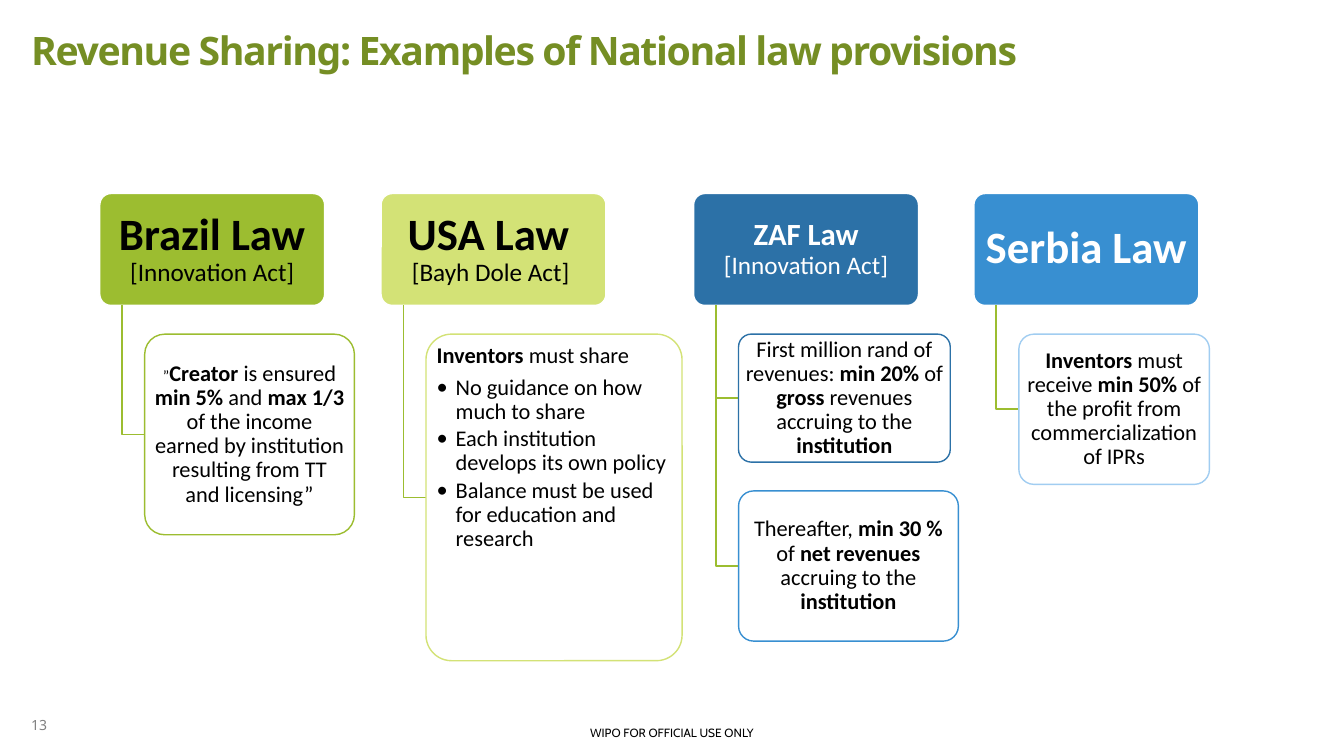
from dataclasses import dataclass, field

from lxml.etree import SubElement
from pptx import Presentation
from pptx.dml.color import RGBColor as Rgb
from pptx.enum.shapes import MSO_SHAPE as Shape
from pptx.enum.text import MSO_ANCHOR as Anchor, MSO_AUTO_SIZE as Fit, PP_ALIGN as Align
from pptx.oxml.ns import qn
from pptx.util import Inches, Pt

HUES = {
    "black": "000000", "white": "FFFFFF", "gray": "808080", "title": "758E24",
    "green": "9CBD30", "lime": "D3E276", "navy": "2C71A7", "blue": "388FD1", "sky": "A1CDF1",
}
CELL = 0.1
TOP, WIDE, HIGH = 19.2, 22.3, 11.1
GAP, TRUNK, SHIFT = 2.85, 2.2, 4.45


@dataclass
class Style:
    size: float
    face: str = "Calibri"
    hue: str = "black"
    align: Align = Align.CENTER
    small: float = 0
    lead: float = 0.9
    anchor: Anchor = Anchor.MIDDLE
    pad: tuple[float, float] = (0.2, 0.2)


@dataclass
class Card:
    cols: float
    rows: float
    edge: str
    text: str = ""


@dataclass
class Law:
    left: float
    hue: str
    head: list[str]
    size: float
    ink: str
    cards: list[Card] = field(default_factory=list)


LAWS = [
    Law(9.9, "green", ["**Brazil Law **[Innovation Act]"], 32, "black", [
        Card(20.8, 19.9, "green", "”**Creator** is ensured **min 5%** and **max 1/3** of the income "
             "earned by institution resulting from TT and licensing”")]),
    Law(37.8, "lime", ["**USA Law **", "[Bayh Dole Act] "], 32, "black", [
        Card(25.4, 32.4, "lime")]),
    Law(68.8, "navy", ["**ZAF Law **[Innovation Act]"], 22, "white", [
        Card(21, 12.7, "navy", "First million rand of revenues: **min 20% **of **gross** revenues "
             "accruing to the **institution**"),
        Card(21.8, 14.9, "blue", "Thereafter, **min 30 % **of **net revenues** accruing to the "
             "**institution**")]),
    Law(96.6, "blue", ["**Serbia Law**"], 32, "white", [
        Card(18.9, 14.9, "sky", "**Inventors** must receive **min 50% **of the profit from "
             "commercialization of IPRs")]),
]
RULES = ["**Inventors** must share", "No guidance on how much to share",
         "Each institution develops its own policy",
         "Balance must be used for education and research"]


def grid(n: float) -> Inches:
    return Inches(n * CELL)


def tint(name: str) -> Rgb:
    return Rgb.from_string(HUES[name])


def place(box, x: float, y: float, w: float, h: float) -> None:
    box.left, box.top, box.width, box.height = map(grid, (x, y, w, h))


def write(frame, lines: list[str], style: Style) -> None:
    frame.text = "\n".join(line.replace("**", "") for line in lines)
    frame.word_wrap = True
    frame.auto_size = Fit.NONE
    frame.vertical_anchor = style.anchor
    frame.margin_left = frame.margin_right = grid(style.pad[0])
    frame.margin_top = frame.margin_bottom = grid(style.pad[1])
    for para, line in zip(frame.paragraphs, lines):
        para.alignment = style.align
        para.line_spacing = style.lead
        para.space_before = Pt(0)
        para.text = ""
        for i, part in enumerate(line.split("**")):
            if not part:
                continue
            run = para.add_run()
            run.text = part
            font = run.font
            font.bold = i % 2 == 1
            font.size = Pt(style.size if font.bold else style.small or style.size)
            font.name = style.face
            font.color.rgb = tint(style.hue)


def block(slide, x: float, y: float, w: float, h: float, fill: str, edge: str):
    box = slide.shapes.add_shape(Shape.ROUNDED_RECTANGLE, *map(grid, (x, y, w, h)))
    box.adjustments[0] = 0.1
    box.shadow.inherit = False
    box.fill.solid()
    box.fill.fore_color.rgb = tint(fill)
    box.line.color.rgb = tint(edge)
    box.line.width = Pt(1)
    return box


def elbow(slide, x: float, low: float, end: float) -> None:
    pen = slide.shapes.build_freeform(grid(x), grid(TOP + HIGH))
    pen.add_line_segments([(grid(x), grid(low)), (grid(end), grid(low))], close=False)
    line = pen.convert_to_shape()
    line.shadow.inherit = False
    line.fill.background()
    line.line.color.rgb = tint("green")
    line.line.width = Pt(1)


def draw(slide, law: Law) -> None:
    head = block(slide, law.left, TOP, WIDE, HIGH, law.hue, "white")
    write(head.text_frame, law.head, Style(law.size, hue=law.ink, small=18, pad=(0.7, 0.4)))
    x = law.left + SHIFT
    y = TOP + HIGH + GAP
    for card in law.cards:
        elbow(slide, law.left + TRUNK, y + card.rows / 2, x)
        box = block(slide, x, y, card.cols, card.rows, "white", card.edge)
        shade = next(box.element.iter(qn("a:srgbClr")))
        SubElement(shade, qn("a:alpha")).set("val", "90000")
        if card.text:
            write(box.text_frame, [card.text], Style(16))
            first = box.text_frame.paragraphs[0].runs[0]
            if first.text == "”":
                first.font.size = Pt(11)
        y += card.rows + GAP


def listing(box) -> None:
    place(box, 43, 33.9, 23.9, 30.9)
    write(box.text_frame, RULES, Style(16, align=Align.LEFT, anchor=Anchor.TOP, pad=(0.3, 0.2)))
    for i, node in enumerate(box.element.iter(qn("a:p"))):
        props = node.get_or_add_pPr()
        dent = grid(1.9) if i else 0
        props.set("marL", str(dent))
        props.set("indent", str(-dent))
        if i:
            SubElement(props, qn("a:buFont")).set("typeface", "Calibri")
            SubElement(props, qn("a:buChar")).set("char", "•")
        else:
            SubElement(props, qn("a:buNone"))
    for i, para in enumerate(box.text_frame.paragraphs):
        para.space_after = Pt(2.4 if i else 5.6)


def label(slide, text: str, x: float, y: float, w: float, h: float, style: Style) -> None:
    box = slide.shapes.add_textbox(*map(grid, (x, y, w, h)))
    write(box.text_frame, [text], style)


def main() -> None:
    deck = Presentation()
    deck.slide_width, deck.slide_height = Inches(13.33), Inches(7.5)
    slide = deck.slides.add_slide(deck.slide_layouts[1])
    title = slide.shapes.title
    place(title, 3.1, 3.1, 115, 8.4)
    write(title.text_frame, ["**Revenue Sharing: Examples of National law provisions**"],
          Style(28, "Noto Sans", "title", Align.LEFT, anchor=Anchor.TOP, pad=(0, 0)))
    for props in title.element.iter(qn("a:rPr")):
        props.set("spc", "-100")
    for law in LAWS:
        draw(slide, law)
    body = slide.placeholders[1]
    listing(body)
    slide.shapes[-1].element.addnext(body.element)
    label(slide, "WIPO FOR OFFICIAL USE ONLY", 0, 71.5, 133.3, 2.4,
          Style(8.5, "Cabin", lead=1, anchor=Anchor.TOP, pad=(1, 0.5)))
    label(slide, "13", 3.1, 68.8, 12.1, 4,
          Style(10, "Noto Sans", "gray", Align.LEFT, lead=1, anchor=Anchor.BOTTOM, pad=(0, 0)))
    deck.save("out.pptx")


if __name__ == "__main__":
    main()
